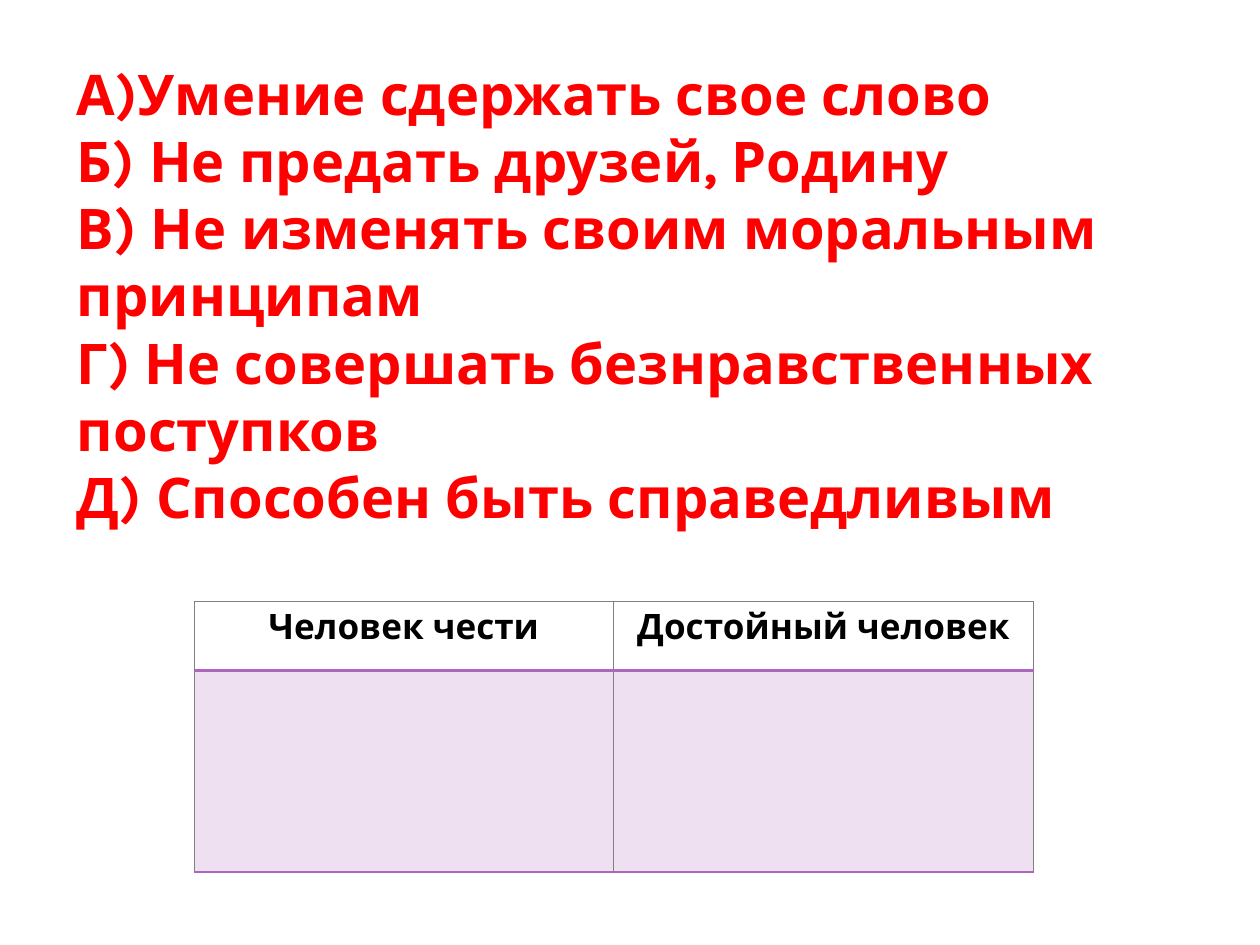
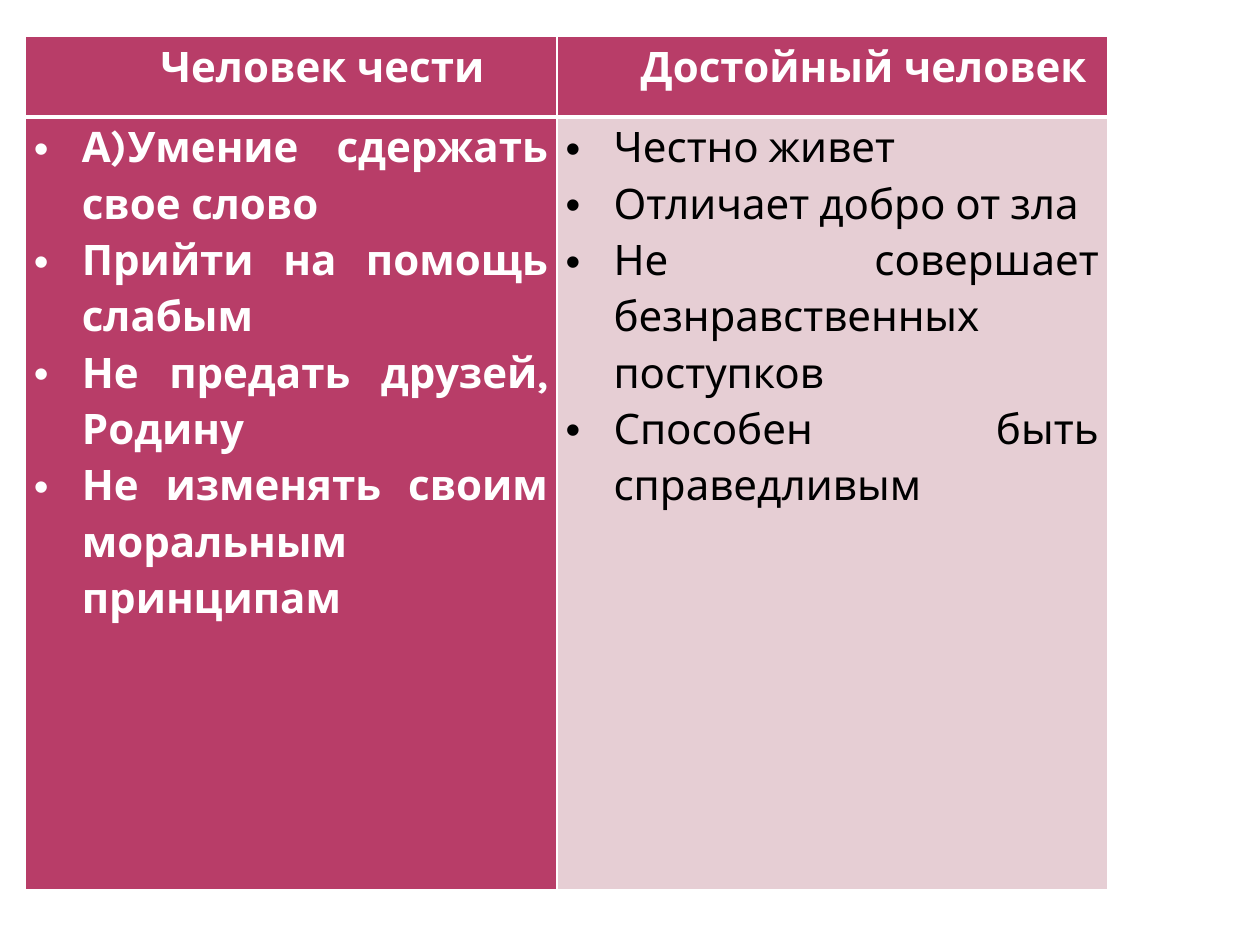
"""Builds two slides that compare a person of honour with a worthy person."""
from lxml import etree
from pptx import Presentation
from pptx.dml.color import RGBColor
from pptx.enum.text import MSO_AUTO_SIZE as AutoSize, PP_ALIGN as Align
from pptx.oxml.ns import qn
from pptx.util import Inches, Pt

COLORS = {
    "red": "FF0000", "black": "000000", "white": "FFFFFF", "grey": "808080",
    "violet": "AC66BB", "crimson": "B83D68", "rose": "E6CED4",
}
FONT = "Karla"
HEADINGS = ["Человек чести", "Достойный человек"]
QUALITIES = [
    "А)Умение сдержать свое слово",
    "Б) Не предать друзей, Родину",
    "В) Не изменять своим моральным принципам",
    "Г) Не совершать безнравственных поступков",
    "Д) Способен быть справедливым",
]
HONOUR = [
    "А)Умение сдержать свое слово",
    "Прийти на помощь слабым",
    "Не предать друзей, Родину",
    "Не изменять своим моральным принципам",
]
WORTH = [
    "Честно живет",
    "Отличает добро от зла",
    "Не совершает безнравственных поступков",
    "Способен быть справедливым",
]


class Deck:
    """Holds the shared style and the current slide."""

    def __init__(self):
        self.presentation = Presentation()
        self.presentation.slide_width = Inches(10)
        self.presentation.slide_height = Inches(7.5)
        self.slide = None

    def add_slide(self, layout):
        self.slide = self.presentation.slides.add_slide(self.presentation.slide_layouts[layout])

    def add_lines(self, frame, lines, size, color, bold=True, align=Align.LEFT,
                  spacing=1.0, margin=0, indent=0, bullet=None):
        for index, line in enumerate(lines):
            paragraph = frame.add_paragraph() if index else frame.paragraphs[0]
            layout = {"alignment": align, "line_spacing": spacing,
                      "space_before": Pt(0), "space_after": Pt(0)}
            for name, value in layout.items():
                setattr(paragraph, name, value)
            properties = paragraph._p.get_or_add_pPr()
            properties.set("marL", str(Inches(margin)))
            properties.set("indent", str(Inches(indent)))
            if bullet:
                etree.SubElement(properties, qn("a:buFont"), typeface="Arial")
                etree.SubElement(properties, qn("a:buChar"), char=bullet)
            else:
                etree.SubElement(properties, qn("a:buNone"))
            run = paragraph.add_run()
            run.text = line
            for name, value in {"name": FONT, "size": Pt(size), "bold": bold}.items():
                setattr(run.font, name, value)
            run.font.color.rgb = RGBColor.from_string(COLORS[color])

    def body(self, lines, left, top, width, height, **style):
        title = self.slide.shapes.title._element
        title.getparent().remove(title)
        shape = self.slide.placeholders[1]
        box = {"left": left, "top": top, "width": width, "height": height}
        for name, value in box.items():
            setattr(shape, name, Inches(value))
        shape.text_frame.word_wrap = True
        shape.text_frame.auto_size = AutoSize.SHAPE_TO_FIT_TEXT
        self.add_lines(shape.text_frame, lines, **style)

    def table(self, left, top, widths, heights):
        frame = self.slide.shapes.add_table(
            len(heights), len(widths), Inches(left), Inches(top),
            Inches(sum(widths)), Inches(sum(heights)))
        table = frame.table
        table.first_row = table.horz_banding = False
        for column, width in zip(table.columns, widths):
            column.width = Inches(width)
        for row, height in zip(table.rows, heights):
            row.height = Inches(height)
        return table

    def cell(self, cell, borders, fill=None, alpha=None, inset=None):
        properties = cell._tc.get_or_add_tcPr()
        for side, (color, width) in zip("LRTB", borders):
            line = etree.SubElement(properties, qn(f"a:ln{side}"), w=str(Pt(width)))
            solid = etree.SubElement(line, qn("a:solidFill"))
            etree.SubElement(solid, qn("a:srgbClr"), val=COLORS[color])
        if inset is not None:
            margins = {"margin_left": inset, "margin_right": inset,
                       "margin_top": 0, "margin_bottom": 0}
            for name, value in margins.items():
                setattr(cell, name, Inches(value))
        if fill is None:
            cell.fill.background()
            return
        cell.fill.solid()
        cell.fill.fore_color.rgb = RGBColor.from_string(COLORS[fill])
        if alpha:
            color = properties.find(qn("a:solidFill")).find(qn("a:srgbClr"))
            etree.SubElement(color, qn("a:alpha"), val=str(alpha * 1000))


def build_question(deck):
    deck.add_slide(1)
    deck.body(QUALITIES, 0.51, 0.42, 8.9, 3.33, size=32, color="red")
    table = deck.table(1.54, 4.77, [3.33, 3.33], [0.55, 1.6])
    thin, rule, edge = ("grey", 0.5), ("violet", 2), ("violet", 1)
    for column, heading in enumerate(HEADINGS):
        header = table.cell(0, column)
        deck.cell(header, [thin, thin, thin, rule])
        deck.add_lines(header.text_frame, [heading], 20, "black", align=Align.CENTER)
        deck.cell(table.cell(1, column), [thin, thin, rule, edge], "violet", alpha=20)


def build_answer(deck):
    deck.add_slide(6)
    table = deck.table(0.2, 0.29, [4.22, 4.37], [0.64, 6.13])
    thin, rule = ("white", 1), ("white", 3)
    columns = [(HONOUR, "crimson", "white", True), (WORTH, "rose", "black", False)]
    for column, (lines, fill, color, bold) in enumerate(columns):
        header, answer = table.cell(0, column), table.cell(1, column)
        deck.cell(header, [thin, thin, thin, rule], "crimson", inset=0.07)
        deck.add_lines(header.text_frame, [HEADINGS[column]], 24, "white",
                       align=Align.CENTER, spacing=1.15, margin=0.5)
        deck.cell(answer, [thin, thin, rule, thin], fill, inset=0.07)
        deck.add_lines(answer.text_frame, lines, 24, color, bold, align=Align.JUSTIFY,
                       spacing=1.15, margin=0.38, indent=-0.38, bullet="•")


def main():
    deck = Deck()
    build_question(deck)
    build_answer(deck)
    deck.presentation.save("out.pptx")


if __name__ == "__main__":
    main()
